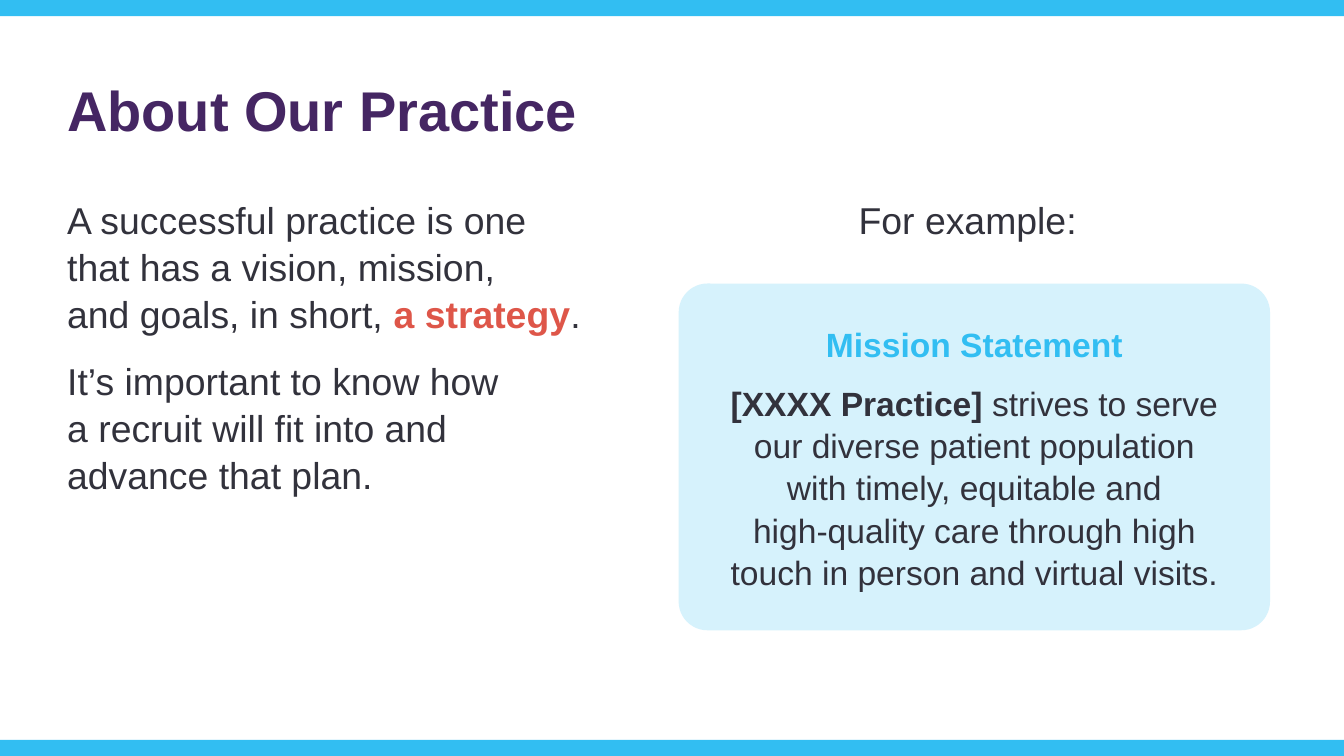
from lxml import etree
from pptx import Presentation
from pptx.dml.color import RGBColor
from pptx.enum.shapes import MSO_SHAPE
from pptx.enum.text import MSO_ANCHOR, MSO_AUTO_SIZE, PP_ALIGN
from pptx.oxml.ns import qn
from pptx.util import Inches, Pt

WIDTH, HEIGHT, BAR = 10, 5.625, 0.12
SKY, PALE, PURPLE, DARK, RED = "32BEF2", "D6F2FC", "452663", "32323C", "DE5649"

# Each paragraph is a list of (text, colour, bold) runs.
TITLE = [[("About Our Practice", PURPLE, True)]]
BODY = [
    [("A successful practice is one\nthat has a vision, mission,\nand goals, in short, ", DARK, False),
     ("a strategy", RED, True), (".", DARK, False)],
    [("It’s important to know how\na recruit will fit into and\nadvance that plan.", DARK, False)],
]
EXAMPLE = [[("For example:", DARK, False)]]
MISSION = [
    [("Mission Statement", SKY, True)],
    [("[XXXX Practice] ", DARK, True),
     ("strives to serve our diverse patient population\nwith timely, equitable and\n"
      "high-quality care through high touch in person and virtual visits.", DARK, False)],
]


def rgb(value):
    return RGBColor.from_string(value)


def place(sp, left, top, width, height):
    sp.left, sp.top, sp.width, sp.height = map(Inches, (left, top, width, height))


def add_block(shapes, kind, box, colour):
    sp = shapes.add_shape(kind, *map(Inches, box))
    sp.shadow.inherit = False
    sp.fill.solid()
    sp.fill.fore_color.rgb = rgb(colour)
    sp.line.fill.background()
    return sp


def write(sp, paragraphs, size, insets, align=PP_ALIGN.LEFT, anchor=MSO_ANCHOR.TOP,
          before=0, after=0, spacing=1.05):
    tf = sp.text_frame
    tf.word_wrap = True
    tf.auto_size = MSO_AUTO_SIZE.NONE
    tf.vertical_anchor = anchor
    tf.margin_left, tf.margin_top, tf.margin_right, tf.margin_bottom = map(Inches, insets)
    for i, runs in enumerate(paragraphs):
        p = tf.add_paragraph() if i else tf.paragraphs[0]
        p.alignment, p.line_spacing = align, spacing
        p.space_before, p.space_after = Pt(before), Pt(after)
        for text, colour, bold in runs:
            for j, line in enumerate(text.split("\n")):
                if j:
                    p.add_line_break()
                r = p.add_run()
                r.text = line
                r.font.name, r.font.size, r.font.bold = "Arial", Pt(size), bold
                r.font.color.rgb = rgb(colour)


def remove_bullets(tf):
    for p in tf.paragraphs:
        pPr = p._p.get_or_add_pPr()
        pPr.set("marL", "0")
        pPr.set("indent", "0")
        etree.SubElement(pPr, qn("a:buNone"))


prs = Presentation()
prs.slide_width, prs.slide_height = Inches(WIDTH), Inches(HEIGHT)
s = prs.slides.add_slide(prs.slide_layouts[1])
shapes = s.shapes

for top in (0, HEIGHT - BAR):
    add_block(shapes, MSO_SHAPE.RECTANGLE, (0, top, WIDTH, BAR), SKY)

title = shapes.title
place(title, 0, 0.3, 9.65, 1.09)
write(title, TITLE, 30, (0.5, 0.05, 0.1, 0.05), anchor=MSO_ANCHOR.MIDDLE, spacing=0.9)

body = s.placeholders[1]
place(body, 0, 1.45, 4.75, 3.57)
write(body, BODY, 20, (0.5, 0, 0.1, 0.05), before=7.5, after=3)
remove_bullets(body.text_frame)

example = shapes.add_textbox(*map(Inches, (5.05, 1.45, 4.4, 0.45)))
write(example, EXAMPLE, 20, (0, 0, 0.1, 0.05), PP_ALIGN.CENTER, before=7.5, after=3)

card = add_block(shapes, MSO_SHAPE.ROUNDED_RECTANGLE, (5.05, 2.11, 4.4, 2.58), PALE)
card.adjustments[0] = 0.083
write(card, MISSION, 18, (0.2, 0.05, 0.2, 0.05), PP_ALIGN.CENTER, MSO_ANCHOR.MIDDLE)
card.text_frame.paragraphs[0].space_after = Pt(9)

prs.save("out.pptx")
